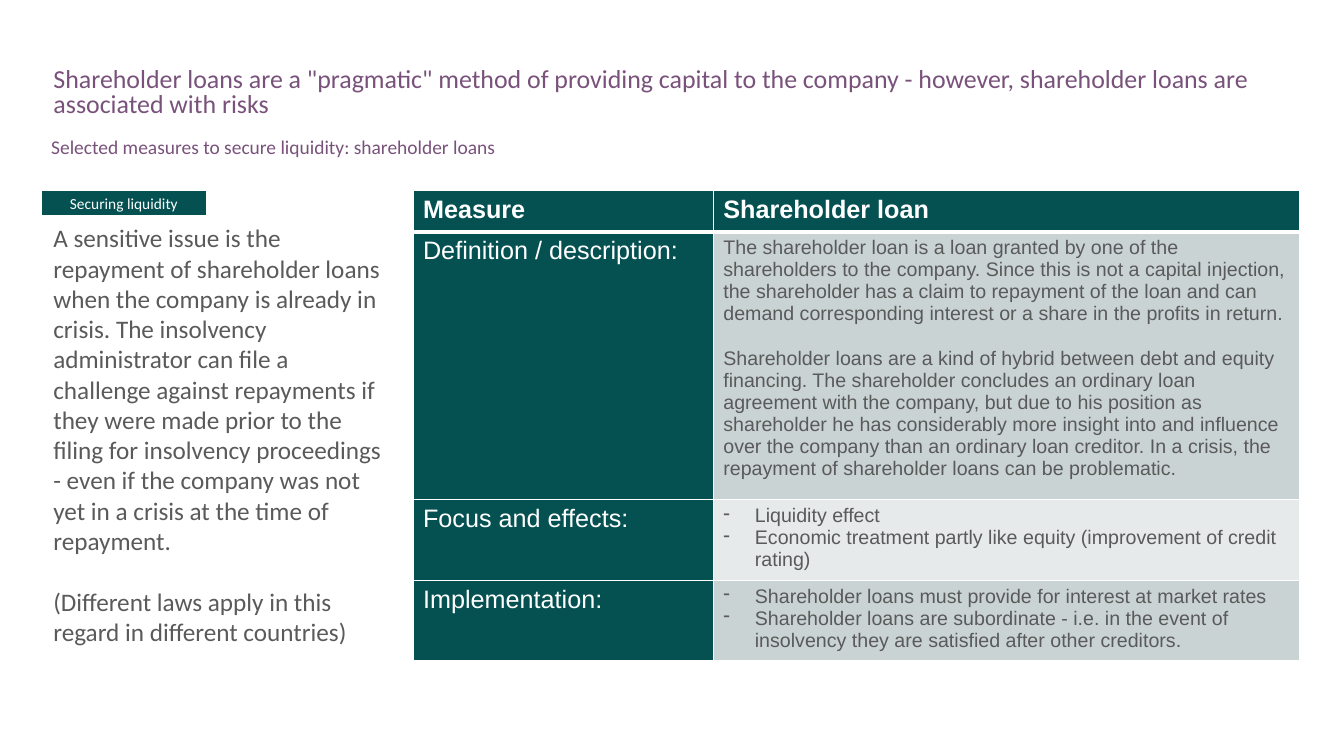
from lxml import etree
from pptx import Presentation
from pptx.dml.color import RGBColor
from pptx.enum.shapes import MSO_SHAPE
from pptx.enum.text import MSO_ANCHOR, MSO_AUTO_SIZE, PP_ALIGN
from pptx.oxml.ns import qn
from pptx.util import Pt

RECTANGLE = MSO_SHAPE.RECTANGLE
TOP, MIDDLE = MSO_ANCHOR.TOP, MSO_ANCHOR.MIDDLE
LEFT, CENTER = PP_ALIGN.LEFT, PP_ALIGN.CENTER
NO_AUTOFIT = MSO_AUTO_SIZE.NONE

GREEN, WHITE, GREY, PURPLE = "055152", "FFFFFF", "595A59", "79527B"
DARK_BAND, LIGHT_BAND = "CAD3D4", "E6EAEA"
BULLET_INDENT = 22.5

TITLE = ('Shareholder loans are a "pragmatic" method of providing capital to the company'
         " - however, shareholder loans are associated with risks")
SUBTITLE = "Selected measures to secure liquidity: shareholder loans"
SIDEBAR = [
    "A sensitive issue is the repayment of shareholder loans when the company is already in "
    "crisis. The insolvency administrator can file a challenge against repayments if they were "
    "made prior to the filing for insolvency proceedings - even if the company was not yet in a "
    "crisis at the time of repayment.",
    "(Different laws apply in this regard in different countries)",
]
HEADER = ("Measure", "Shareholder loan")
# Label, paragraphs, bulleted, band colour, row height
MEASURE_ROWS = [
    ("Definition / description:", [
        "The shareholder loan is a loan granted by one of the shareholders to the company. Since "
        "this is not a capital injection, the shareholder has a claim to repayment of the loan and "
        "can demand corresponding interest or a share in the profits in return.",
        "Shareholder loans are a kind of hybrid between debt and equity financing. The shareholder "
        "concludes an ordinary loan agreement with the company, but due to his position as "
        "shareholder he has considerably more insight into and influence over the company than an "
        "ordinary loan creditor. In a crisis, the repayment of shareholder loans can be problematic.",
    ], False, DARK_BAND, 180),
    ("Focus and effects:", [
        "Liquidity effect",
        "Economic treatment partly like equity (improvement of credit rating)",
    ], True, LIGHT_BAND, 54),
    ("Implementation:", [
        "Shareholder loans must provide for interest at market rates",
        "Shareholder loans are subordinate - i.e. in the event of insolvency they are satisfied "
        "after other creditors.",
    ], True, DARK_BAND, 54),
]


def rgb(value):
    return RGBColor.from_string(value)


def add_dash(paragraph):
    properties = paragraph._p.get_or_add_pPr()
    properties.set("marL", str(Pt(BULLET_INDENT)))
    properties.set("indent", str(-Pt(BULLET_INDENT)))
    color = etree.SubElement(properties, qn("a:buClr"))
    etree.SubElement(color, qn("a:srgbClr"), val=GREY)
    etree.SubElement(properties, qn("a:buChar"), char="-")


def write_text(text_frame, paragraphs, font, size, color, bold=False, align=LEFT,
               line_spacing=None, gap=0, dashes=False):
    text_frame.word_wrap = True
    text_frame.text = "\n".join(paragraphs)
    for index, paragraph in enumerate(text_frame.paragraphs):
        if dashes:
            add_dash(paragraph)
        paragraph.alignment = align
        paragraph.line_spacing = line_spacing
        paragraph.space_before = Pt(gap if index else 0)
        for run in paragraph.runs:
            run.font.name = font
            run.font.size = Pt(size)
            run.font.bold = bold
            run.font.color.rgb = rgb(color)


def format_cell(cell, fill, top_width, bottom_width):
    properties = cell._tc.get_or_add_tcPr()
    for side, width in (("L", 1), ("R", 1), ("T", top_width), ("B", bottom_width)):
        line = etree.SubElement(properties, qn(f"a:ln{side}"), w=str(Pt(width)))
        solid = etree.SubElement(line, qn("a:solidFill"))
        etree.SubElement(solid, qn("a:srgbClr"), val=WHITE)
    cell.fill.solid()
    cell.fill.fore_color.rgb = rgb(fill)


def add_heading(slide, left, top, width):
    # Title
    title = slide.shapes.title
    title.left, title.top, title.width, title.height = Pt(left + 1.5), Pt(top), Pt(width), Pt(46)
    title.text_frame.auto_size = NO_AUTOFIT
    title.text_frame.vertical_anchor = TOP
    write_text(title.text_frame, [TITLE], "Calibri", 18.5, PURPLE, line_spacing=0.8)
    # Subtitle
    subtitle = slide.shapes.add_textbox(Pt(left), Pt(top + 52), Pt(width), Pt(20))
    write_text(subtitle.text_frame, [SUBTITLE], "Calibri", 13.9, PURPLE, line_spacing=0.7)


def add_sidebar(slide, left, top, width, height):
    # Explanation
    body = slide.shapes.add_textbox(Pt(left + 1.5), Pt(top - 7), Pt(width), Pt(height))
    body.text_frame.vertical_anchor = MIDDLE
    write_text(body.text_frame, SIDEBAR, "Calibri", 18, GREY, gap=22)
    # Topic tag
    tag = slide.shapes.add_shape(RECTANGLE, Pt(left), Pt(top), Pt(118), Pt(18))
    tag.shadow.inherit = False
    tag.fill.solid()
    tag.fill.fore_color.rgb = rgb(GREEN)
    tag.line.color.rgb = rgb(WHITE)
    tag.line.width = Pt(1)
    tag.text_frame.vertical_anchor = MIDDLE
    write_text(tag.text_frame, ["Securing liquidity"], "Calibri", 11, WHITE, align=CENTER)


def add_measure_table(slide, left, top, width):
    heights = [29.5] + [row[-1] for row in MEASURE_ROWS]
    table = slide.shapes.add_table(len(heights), 2, Pt(left), Pt(top), Pt(width),
                                   Pt(sum(heights))).table
    label_width = 214.5
    table.columns[0].width = Pt(label_width)
    table.columns[1].width = Pt(width - label_width)
    for row, height in zip(table.rows, heights):
        row.height = Pt(height)
    # Header row
    for column, heading in enumerate(HEADER):
        cell = table.cell(0, column)
        format_cell(cell, GREEN, 1, 3)
        write_text(cell.text_frame, [heading], "Arial", 18, WHITE, bold=True)
    # Measure rows
    for index, (label, paragraphs, dashes, band, _) in enumerate(MEASURE_ROWS, start=1):
        label_cell, detail_cell = table.cell(index, 0), table.cell(index, 1)
        for cell, fill in ((label_cell, GREEN), (detail_cell, band)):
            format_cell(cell, fill, 3 if index == 1 else 1, 1)
        write_text(label_cell.text_frame, [label], "Arial", 18, WHITE)
        write_text(detail_cell.text_frame, paragraphs, "Arial", 14, GREY,
                   gap=0 if dashes else 16, dashes=dashes)


def main():
    presentation = Presentation()
    presentation.slide_width, presentation.slide_height = Pt(960), Pt(540)
    slide = presentation.slides.add_slide(presentation.slide_layouts[5])
    add_heading(slide, 29.5, 45.5, 903)
    add_sidebar(slide, 29.5, 136, 251, 363)
    add_measure_table(slide, 295, 136, 633.5)
    presentation.save("out.pptx")


if __name__ == "__main__":
    main()
